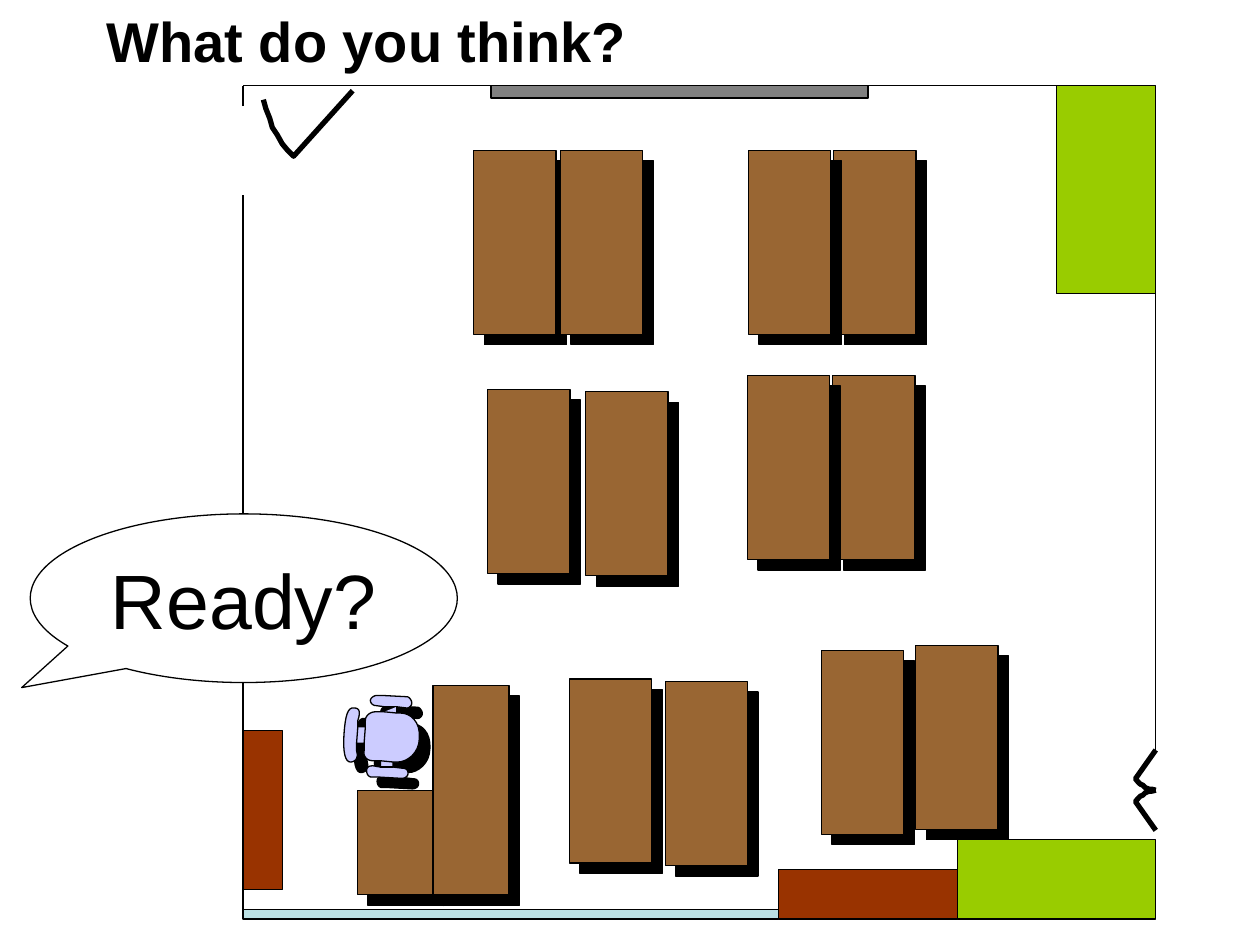
import pptx
import pptx.dml.color
import pptx.enum.shapes
import pptx.enum.text
import pptx.oxml
import pptx.util
from pptx.util import Cm, Pt

BLACK, WHITE = "000000", "FFFFFF"
WOOD, GREEN, RED = "996633", "99CC00", "993300"
SHAPES = pptx.enum.shapes.MSO_SHAPE
DRAWING = "http://schemas.openxmlformats.org/drawingml/2006/main"

DESK_SIZE = (1.66, 3.71)
DESKS = [
    (11.91, 1.3), (4.65, 1.3), (11.89, 5.84), (4.93, 6.12),
    (13.56, 11.28), (11.66, 11.38), (8.51, 12.01), (10.19, 1.3),
    (6.4, 1.3), (10.17, 5.84), (6.91, 6.17), (6.58, 11.96),
]
TEACHER_DESK = [
    (1.52, 2.11), (0, 2.11), (0, 4.22), (3.05, 4.22),
    (3.05, 0), (1.52, 0), (1.52, 4.22), (1.52, 2.11),
]
DOOR = [
    (1.8, 0), (0.61, 1.32), (0.48, 1.19), (0.38, 1.07), (0.28, 0.89),
    (0.18, 0.74), (0.13, 0.56), (0.05, 0.36), (0, 0.18),
]
SIDE_DOOR = [
    (0.41, 0), (0, 0.58), (0.05, 0.64), (0.1, 0.69), (0.15, 0.71),
    (0.2, 0.76), (0.28, 0.79), (0.33, 0.79), (0.41, 0.81),
]
SIDE_DOOR_HEIGHT = 1.62

# Chair on a grid 62 units wide: pairs are corners, sextets are Bezier curves.
CHAIR_GRID = 62
CHAIR_OUTLINE = [
    (12, 25), (12, 20), (15, 11, 12, 10, 9, 10), (4, 9, 2, 16, 1, 31),
    (0, 45, 2, 53, 6, 53), (9, 53, 13, 51, 11, 44), (11, 38), (17, 38),
    (17, 44), (16, 48, 19, 52, 24, 52), (30, 52), (30, 57), (24, 56),
    (21, 56, 19, 57, 19, 60), (19, 63, 21, 65, 23, 65), (29, 65), (47, 66),
    (50, 66, 52, 64, 52, 62), (52, 59, 50, 58, 48, 58), (40, 57), (40, 53),
    (44, 53), (51, 53, 61, 46, 61, 34), (62, 21, 54, 14, 46, 14), (43, 14),
    (43, 9), (51, 10), (53, 10, 55, 8, 55, 6), (55, 4, 53, 1, 51, 1),
    (32, 0), (27, 0), (25, 0, 22, 2, 22, 4), (22, 6, 24, 8, 26, 8), (33, 9),
    (33, 13), (26, 13), (22, 13, 18, 16, 18, 20), (18, 25), (12, 25),
]
CHAIR_SEAMS = [
    [(30, 52), (40, 53)], [(40, 57), (30, 57)], [(33, 13), (33, 9), (43, 9)],
    [(43, 14), (33, 13)], [(11, 38), (12, 25)], [(18, 25), (17, 38)],
]


def color(hex_string):
    return pptx.dml.color.RGBColor.from_string(hex_string)


def style(shape, fill=None, line_width=0.75):
    shape.shadow.inherit = False
    if fill:
        shape.fill.solid()
        shape.fill.fore_color.rgb = color(fill)
    else:
        shape.fill.background()
    shape.line.color.rgb = color(BLACK)
    shape.line.width = Pt(line_width)


def cast_shadow(shape):
    """Give the shape a hard black shadow towards the lower right."""
    effects = shape._element.spPr.find(f"{{{DRAWING}}}effectLst")
    effects.append(pptx.oxml.parse_xml(
        f'<a:outerShdw xmlns:a="{DRAWING}" dist="{Pt(8.5)}" dir="2700000" '
        f'algn="ctr" rotWithShape="0"><a:srgbClr val="{BLACK}"/></a:outerShdw>'
    ))


def add_block(slide, left, top, width, height, fill):
    shape = slide.shapes.add_shape(
        SHAPES.RECTANGLE, Cm(left), Cm(top), Cm(width), Cm(height))
    style(shape, fill)
    return shape


def add_outline(slide, left, top, strokes, closed=False):
    """Draw strokes, lists of points in cm from left and top; close the first."""
    first, *others = [[(Cm(x), Cm(y)) for x, y in stroke] for stroke in strokes]
    builder = slide.shapes.build_freeform(*first[0])
    builder.add_line_segments(first[1:], close=closed)
    for stroke in others:
        builder.move_to(*stroke[0])
        builder.add_line_segments(stroke[1:], close=False)
    return builder.convert_to_shape(Cm(left), Cm(top))


def flatten_curves(outline, steps=8):
    points = [outline[0]]
    for segment in outline[1:]:
        if len(segment) == 2:
            points.append(segment)
            continue
        x0, y0 = points[-1]
        x1, y1, x2, y2, x3, y3 = segment
        for step in range(1, steps + 1):
            t = step / steps
            weights = ((1 - t) ** 3, 3 * t * (1 - t) ** 2, 3 * t * t * (1 - t), t ** 3)
            points.append(tuple(
                sum(weight * value for weight, value in zip(weights, values))
                for values in ((x0, x1, x2, x3), (y0, y1, y2, y3))))
    return points


def add_desks(slide, left, top):
    for x, y in DESKS:
        cast_shadow(add_block(slide, left + x, top + y, *DESK_SIZE, WOOD))


def add_teacher_place(slide, left, top):
    desk = add_outline(slide, left, top, [TEACHER_DESK], closed=True)
    style(desk, WOOD)
    cast_shadow(desk)


def add_chair(slide, left, top, width):
    unit = width / CHAIR_GRID
    strokes = [[(x * unit, y * unit) for x, y in stroke]
               for stroke in [flatten_curves(CHAIR_OUTLINE)] + CHAIR_SEAMS]
    chair = add_outline(slide, left, top, strokes, closed=True)
    style(chair, "CCCCFF")
    cast_shadow(chair)


def add_side_doors(slide, left, top):
    lower_leaf = [(x, SIDE_DOOR_HEIGHT - y) for x, y in SIDE_DOOR]
    for leaf in (SIDE_DOOR, lower_leaf):
        style(add_outline(slide, left, top, [leaf]), line_width=3)


def add_wall(slide, x1, y1, x2, y2):
    wall = slide.shapes.add_connector(
        pptx.enum.shapes.MSO_CONNECTOR.STRAIGHT, Cm(x1), Cm(y1), Cm(x2), Cm(y2))
    wall.line.color.rgb = color(BLACK)
    wall.line.width = Pt(0.75)
    wall._element.spPr.append(
        pptx.oxml.parse_xml(f'<a:effectLst xmlns:a="{DRAWING}"/>'))


def add_classroom(slide, left, top, width, height):
    right, bottom = left + width, top + height
    add_desks(slide, left, top)
    add_teacher_place(slide, left + 2.31, top + 12.09)
    style(add_outline(slide, left + 0.41, top + 0.1, [DOOR]), line_width=3)
    add_chair(slide, left + 2.01, top + 12.29, 1.57)
    add_block(slide, right - 2, top, 2, 4.19, GREEN)
    add_block(slide, right - 4, bottom - 1.6, 4, 1.6, GREEN)
    add_side_doors(slide, right - 0.41, top + 13.39)
    add_block(slide, left, bottom - 0.2, 10.8, 0.2, "BBE0E3")
    add_block(slide, left + 10.8, bottom - 1, 3.6, 1, RED)
    add_wall(slide, left, top + 2.21, left, bottom)
    add_wall(slide, right, top + 13.41, right, top)
    add_wall(slide, right - 2, top, left, top)
    add_wall(slide, left, top + 0.41, left, top)
    add_block(slide, left + 5, top, 7.6, 0.25, "808080")
    add_block(slide, left, top + 13, 0.8, 3.2, RED)


def set_text(shape, text, size, bold=False):
    shape.text_frame.text = text
    paragraph = shape.text_frame.paragraphs[0]
    font = paragraph.runs[0].font
    font.name, font.size, font.bold = "Arial", Pt(size), bold
    font.color.rgb = color(BLACK)
    return paragraph


def add_title(slide, left, top, width, height):
    title = slide.shapes.add_textbox(Cm(left), Cm(top), Cm(width), Cm(height))
    title.text_frame.word_wrap = False
    set_text(title, "What do you think?", 32, bold=True)


def add_speech_bubble(slide, left, top, width, height):
    bubble = slide.shapes.add_shape(
        SHAPES.OVAL_CALLOUT, Cm(left), Cm(top), Cm(width), Cm(height))
    bubble.adjustments[0], bubble.adjustments[1] = -0.52, 0.53
    style(bubble, WHITE)
    bubble.text_frame.vertical_anchor = pptx.enum.text.MSO_ANCHOR.MIDDLE
    paragraph = set_text(bubble, "Ready?", 44)
    paragraph.alignment = pptx.enum.text.PP_ALIGN.CENTER


def main():
    presentation = pptx.Presentation()
    presentation.slide_width, presentation.slide_height = Cm(25.4), Cm(19.05)
    slide = presentation.slides.add_slide(presentation.slide_layouts[6])
    add_classroom(slide, 4.9, 1.73, 18.4, 16.8)
    add_title(slide, 1.9, 0, 11.6, 1.63)
    add_speech_bubble(slide, 0.61, 10.36, 8.61, 3.4)
    presentation.save("out.pptx")


if __name__ == "__main__":
    main()
